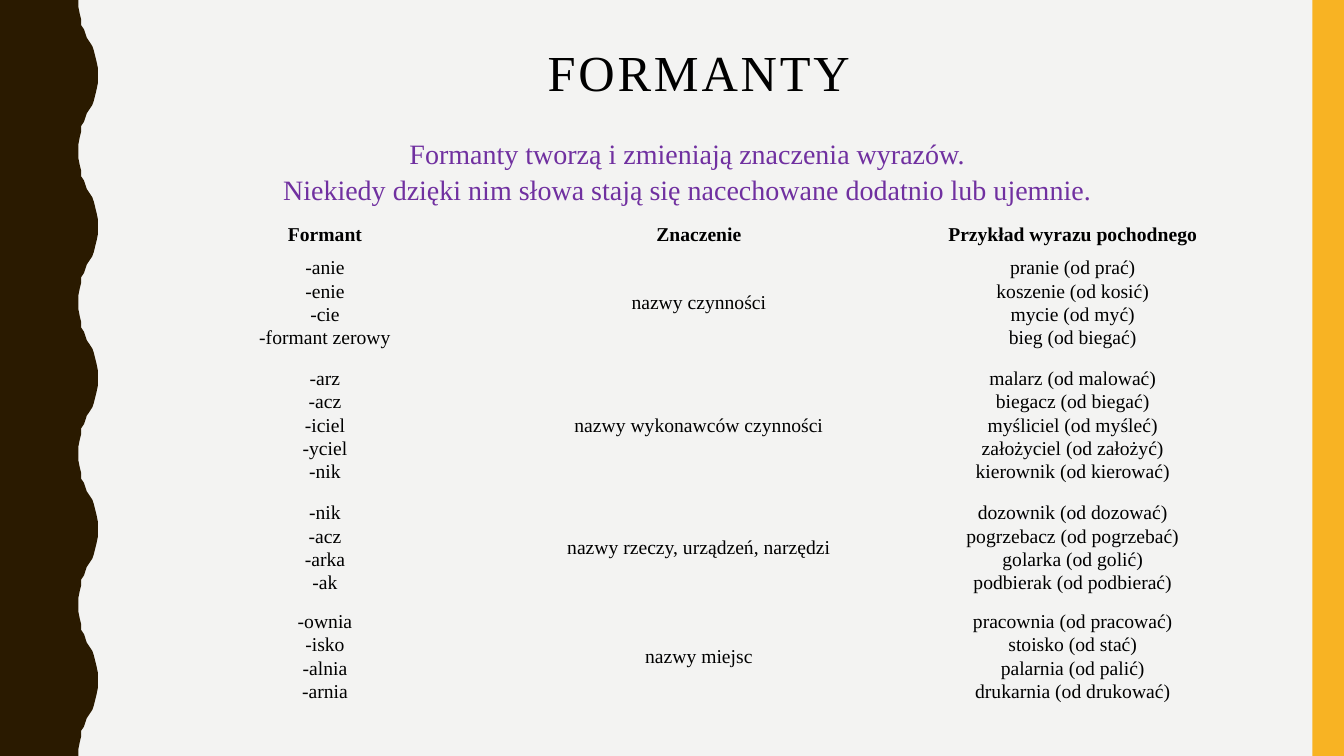
from dataclasses import dataclass

from pptx import Presentation
from pptx.dml.color import RGBColor
from pptx.enum.shapes import MSO_SHAPE
from pptx.enum.text import MSO_ANCHOR, PP_ALIGN
from pptx.oxml.ns import qn
from pptx.util import Pt


@dataclass(frozen=True)
class Theme:
    font: str = "Times New Roman"
    background: str = "F3F3F2"
    wave: str = "2A1A00"
    band: str = "F8B323"
    text: str = "000000"
    accent: str = "7030A0"
    title_size: int = 36
    intro_size: int = 20
    table_size: int = 14


THEME = Theme()
SLIDE_W, SLIDE_H = 960, 540
NO_GRID_STYLE = "{2D5ABB26-0587-4C30-8999-92F81FD0307C}"

# Half of one wave; the other half mirrors it
WAVE_PERIOD = 108
HALF_WAVE = [
    (56, 0), (56, 5), (57, 10), (57.6, 14.4), (58.5, 18), (60, 21), (61, 24),
    (62.5, 27), (64, 30), (65.5, 33), (67, 36), (68.4, 39.6), (69.3, 44),
    (69.8, 49), (70, 54),
]

INTRO = [
    "Formanty tworzą i zmieniają znaczenia wyrazów.",
    "Niekiedy dzięki nim słowa stają się nacechowane dodatnio lub ujemnie.",
]
COLUMN_W = 267.1
ROW_HEIGHTS = [20, 77.8, 97.2, 77.8, 77.8]
ROWS = [
    (["Formant"], ["Znaczenie"], ["Przykład wyrazu pochodnego"]),
    (["-anie", "-enie", "-cie", "-formant zerowy"],
     ["nazwy czynności"],
     ["pranie (od prać)", "koszenie (od kosić)", "mycie (od myć)",
      "bieg (od biegać)"]),
    (["-arz", "-acz", "-iciel", "-yciel", "-nik"],
     ["nazwy wykonawców czynności"],
     ["malarz (od malować)", "biegacz (od biegać)", "myśliciel (od myśleć)",
      "założyciel (od założyć)", "kierownik (od kierować)"]),
    (["-nik", "-acz", "-arka", "-ak"],
     ["nazwy rzeczy, urządzeń, narzędzi"],
     ["dozownik (od dozować)", "pogrzebacz (od pogrzebać)",
      "golarka (od golić)", "podbierak (od podbierać)"]),
    (["-ownia", "-isko", "-alnia", "-arnia"],
     ["nazwy miejsc"],
     ["pracownia (od pracować)", "stoisko (od stać)", "palarnia (od palić)",
      "drukarnia (od drukować)"]),
]


def paint(sp, color):
    sp.shadow.inherit = False
    sp.fill.solid()
    sp.fill.fore_color.rgb = RGBColor.from_string(color)
    sp.line.fill.background()


def write_lines(tf, lines, size, color, bold=False, spacing=1.07,
                before=0, after=0):
    """Write one centred paragraph with line breaks between its runs."""
    p = tf.paragraphs[0]
    p.alignment = PP_ALIGN.CENTER
    p.line_spacing = spacing
    p.space_before, p.space_after = Pt(before), Pt(after)
    for i, line in enumerate(lines):
        if i:
            p.add_line_break()
        r = p.add_run()
        r.text = line
        r.font.name, r.font.size, r.font.bold = THEME.font, Pt(size), bold
        r.font.color.rgb = RGBColor.from_string(color)
    return p


def add_wave(s):
    mirrored = [(x, WAVE_PERIOD - y) for x, y in HALF_WAVE[-2:0:-1]]
    period = HALF_WAVE + mirrored
    edge = [(x, y + n * WAVE_PERIOD)
            for n in range(SLIDE_H // WAVE_PERIOD) for x, y in period]
    points = edge + [(HALF_WAVE[0][0], SLIDE_H), (0, SLIDE_H)]
    outline = s.shapes.build_freeform(0, 0, scale=Pt(1))
    outline.add_line_segments(points, close=True)
    paint(outline.convert_to_shape(), THEME.wave)


def add_band(s, left, width):
    sp = s.shapes.add_shape(MSO_SHAPE.RECTANGLE, Pt(left), 0, Pt(width),
                            Pt(SLIDE_H))
    paint(sp, THEME.band)


def set_title(s, text):
    sp = s.shapes.title
    sp.left, sp.top, sp.width, sp.height = Pt(98.6), Pt(30), Pt(801.3), Pt(47)
    tf = sp.text_frame
    tf.word_wrap = True
    tf.vertical_anchor = MSO_ANCHOR.MIDDLE
    p = write_lines(tf, [text], THEME.title_size, THEME.text, spacing=0.9)
    p.runs[0].font._element.set("spc", "200")


def add_intro(s, lines):
    sp = s.shapes.add_textbox(Pt(82), Pt(92), Pt(818), Pt(60))
    sp.text_frame.word_wrap = True
    write_lines(sp.text_frame, lines, THEME.intro_size, THEME.accent,
                before=7, after=8)


def add_formant_table(s, left, top):
    frame = s.shapes.add_table(len(ROWS), len(ROWS[0]), Pt(left), Pt(top),
                               Pt(COLUMN_W * len(ROWS[0])),
                               Pt(sum(ROW_HEIGHTS)))
    table = frame.table
    table.horz_banding = False
    table._tbl.tblPr.find(qn("a:tableStyleId")).text = NO_GRID_STYLE
    for column in table.columns:
        column.width = Pt(COLUMN_W)
    for i, row in enumerate(ROWS):
        table.rows[i].height = Pt(ROW_HEIGHTS[i])
        for j, lines in enumerate(row):
            cell = table.cell(i, j)
            cell.fill.background()
            cell.vertical_anchor = MSO_ANCHOR.MIDDLE
            cell.margin_left = cell.margin_right = Pt(0.7)
            cell.margin_top = cell.margin_bottom = Pt(0.7)
            write_lines(cell.text_frame, lines, THEME.table_size, THEME.text,
                        bold=i == 0, after=0 if j == 1 else 8)


def main():
    prs = Presentation()
    prs.slide_width, prs.slide_height = Pt(SLIDE_W), Pt(SLIDE_H)
    s = prs.slides.add_slide(prs.slide_layouts[5])
    s.background.fill.solid()
    s.background.fill.fore_color.rgb = RGBColor.from_string(THEME.background)

    # Side decoration
    add_wave(s)
    add_band(s, 937.5, 22.5)

    # Content
    set_title(s, "FORMANTY")
    add_intro(s, INTRO)
    add_formant_table(s, 98.6, 157)

    prs.save("out.pptx")


if __name__ == "__main__":
    main()
